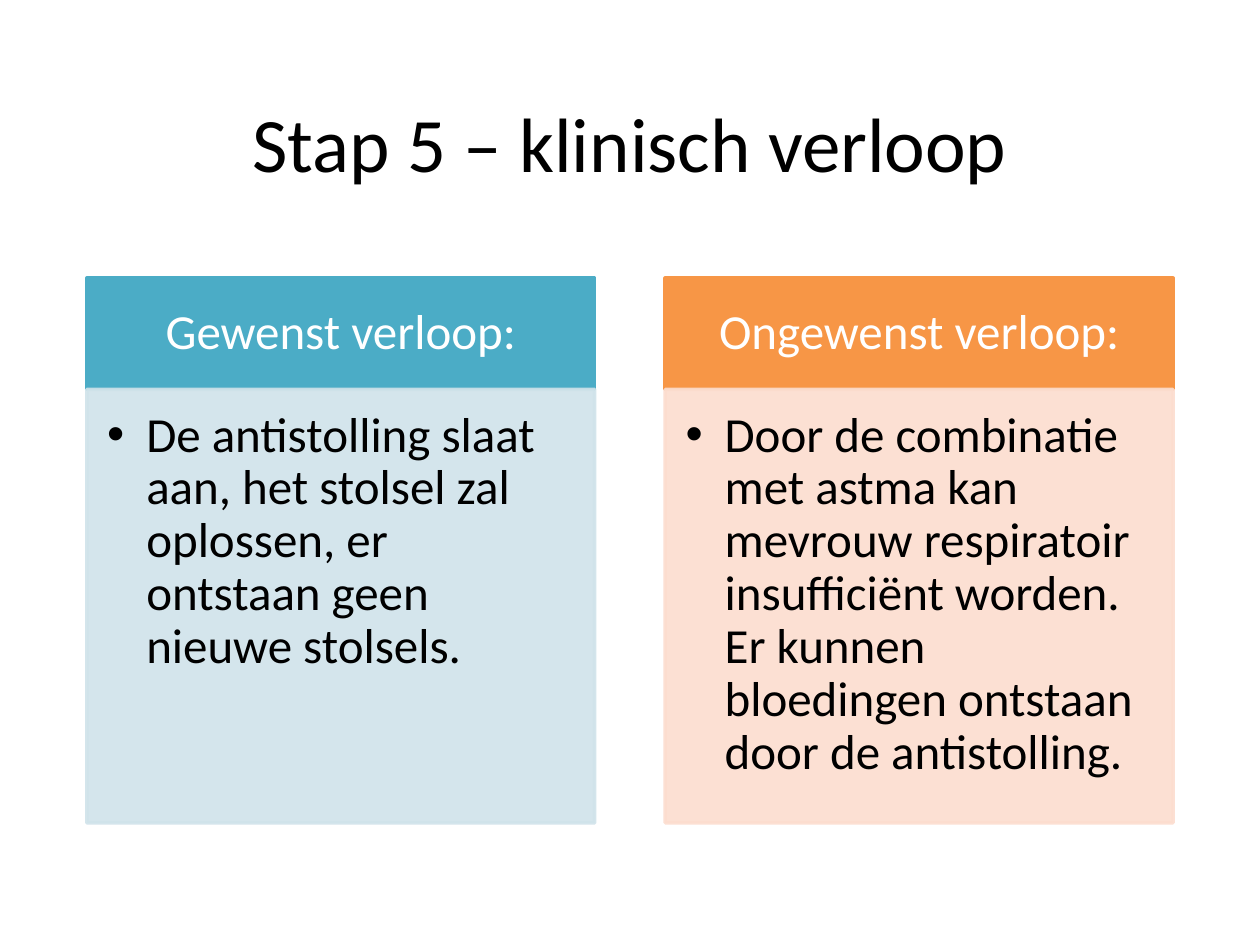
"""Build a slide comparing the desired and undesired clinical course."""
from dataclasses import dataclass

from lxml.etree import SubElement
from pptx import Presentation
from pptx.dml.color import RGBColor
from pptx.enum.shapes import MSO_SHAPE
from pptx.enum.text import MSO_ANCHOR, PP_ALIGN
from pptx.oxml.ns import qn
from pptx.util import Cm, Pt


@dataclass(frozen=True)
class Theme:
    font: str = "Calibri"
    title_size: int = 44
    text_size: int = 28
    dark: str = "000000"
    light: str = "FFFFFF"
    teal: str = "4BACC6"
    pale_teal: str = "D0E3EA"
    orange: str = "F79646"
    pale_orange: str = "FCDDCF"


def style_text(tf, size, color, align, anchor):
    tf.word_wrap = True
    tf.vertical_anchor = anchor
    p = tf.paragraphs[0]
    p.alignment = align
    for r in p.runs:
        r.font.name = theme.font
        r.font.size = Pt(size)
        r.font.color.rgb = RGBColor.from_string(color)
    return p


def add_box(left, top, height, text, fill, opacity, insets):
    sp = s.shapes.add_shape(MSO_SHAPE.RECTANGLE, left, top, column_width, height)
    sp.shadow.inherit = False
    sp.fill.solid()
    sp.line.width = Pt(2)
    for paint in (sp.fill.fore_color, sp.line.color):
        paint.rgb = RGBColor.from_string(fill)
    if opacity < 100:
        for clr in sp.element.spPr.iter(qn("a:srgbClr")):
            SubElement(clr, qn("a:alpha"), val=str(opacity * 1000))
    tf = sp.text_frame
    tf.margin_left, tf.margin_top, tf.margin_right, tf.margin_bottom = map(Cm, insets)
    tf.text = text
    return tf


theme = Theme()
prs = Presentation()
prs.slide_width, prs.slide_height = Cm(25.4), Cm(19.05)
s = prs.slides.add_slide(prs.slide_layouts[5])

margin = Cm(1.75)
column_width = Cm(10.24)
header_top, header_height = Cm(5.61), Cm(2.24)
body_top, body_height = header_top + header_height, Cm(8.74)
bullet_indent = Cm(0.79)

title = s.shapes.title
title.left, title.top = margin, Cm(1.02)
title.width, title.height = prs.slide_width - 2 * margin, Cm(3.68)
title.text_frame.text = "Stap 5 – klinisch verloop"
style_text(title.text_frame, theme.title_size, theme.dark, PP_ALIGN.CENTER, MSO_ANCHOR.MIDDLE)

columns = [
    (margin, "Gewenst verloop:", theme.teal, theme.pale_teal,
     "De antistolling slaat aan, het stolsel zal oplossen, er ontstaan geen "
     "nieuwe stolsels."),
    (prs.slide_width - margin - column_width, "Ongewenst verloop:",
     theme.orange, theme.pale_orange,
     "Door de combinatie met astma kan mevrouw respiratoir insufficiënt worden. "
     "Er kunnen bloedingen ontstaan door de antistolling."),
]

for left, heading, strong, pale, body in columns:
    tf = add_box(left, header_top, header_height, heading, strong, 100,
                 (0.56, 0.3, 0.56, 0.3))
    p = style_text(tf, theme.text_size, theme.light, PP_ALIGN.CENTER, MSO_ANCHOR.MIDDLE)
    p.line_spacing = 0.9

    tf = add_box(left, body_top, body_height, body, pale, 90,
                 (0.41, 0.41, 0.56, 0.61))
    p = style_text(tf, theme.text_size, theme.dark, PP_ALIGN.LEFT, MSO_ANCHOR.TOP)
    p.level = 1
    pPr = p._p.get_or_add_pPr()
    pPr.set("marL", str(bullet_indent))
    pPr.set("indent", str(-bullet_indent))
    SubElement(pPr, qn("a:buFont"), typeface="Arial")
    SubElement(pPr, qn("a:buChar"), char="•")
    p.line_spacing = 0.9

prs.save("out.pptx")
